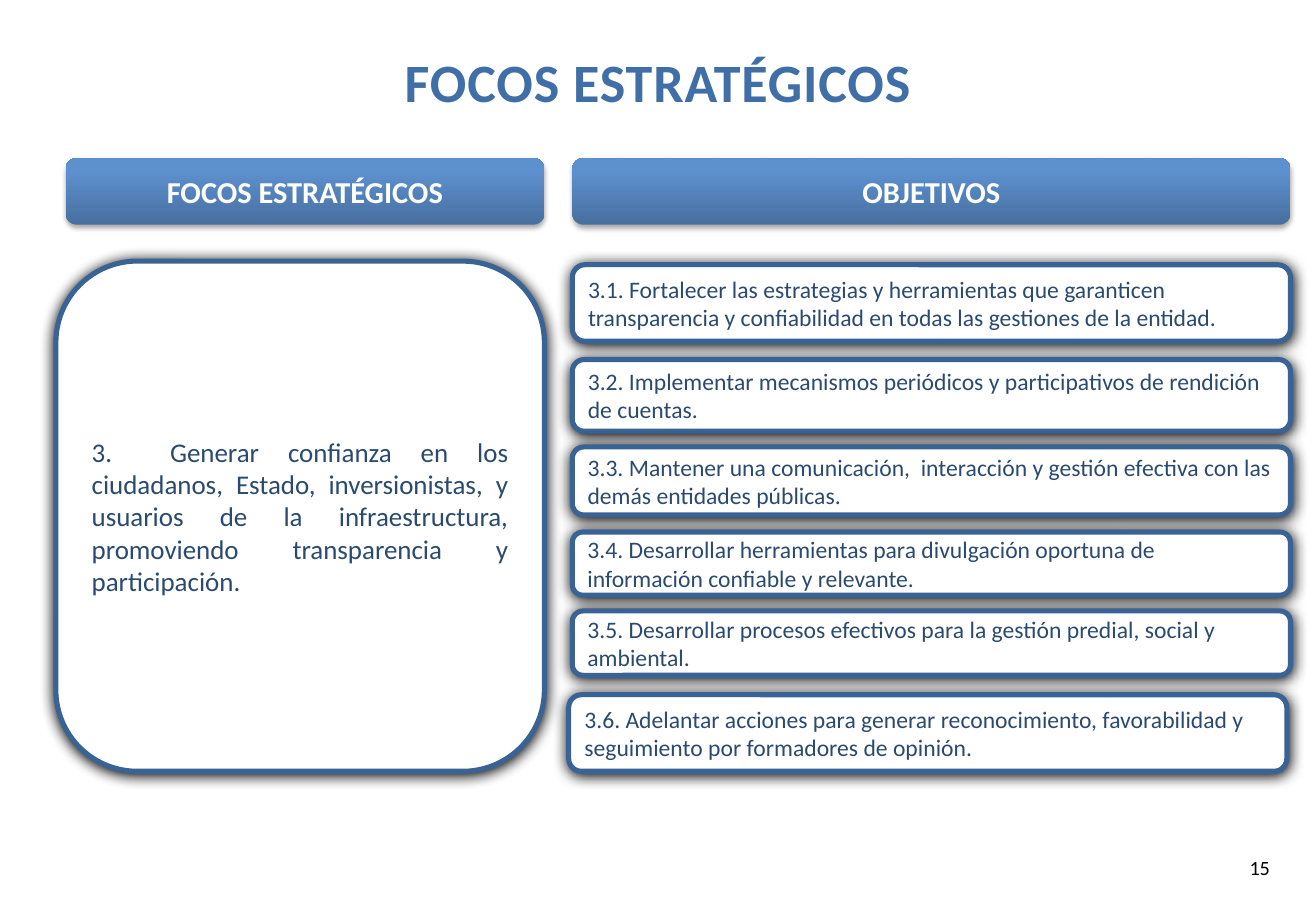
"""Build the slide of strategic focus areas and their objectives."""
from lxml import etree
from pptx import Presentation
from pptx.dml.color import RGBColor
from pptx.enum.shapes import MSO_SHAPE as Shape
from pptx.enum.text import MSO_ANCHOR as Anchor, PP_ALIGN as Align
from pptx.oxml import parse_xml
from pptx.oxml.ns import nsdecls, qn
from pptx.util import Inches, Pt

FONT = "Calibri"
WHITE = RGBColor(0xFF, 0xFF, 0xFF)
BLACK = RGBColor(0x00, 0x00, 0x00)
TITLE_BLUE = RGBColor(0x40, 0x6F, 0xA7)
BORDER_BLUE = RGBColor(0x39, 0x63, 0x95)
TEXT_BLUE = RGBColor(0x2B, 0x4A, 0x6F)
HEADER_STOPS = [
    (0, RGBColor(0x47, 0x6F, 0x9F)),
    (80, RGBColor(0x5D, 0x90, 0xCE)),
    (100, RGBColor(0x5B, 0x91, 0xD1)),
]


def write(box, text, size, color, align, bold=False, anchor=Anchor.MIDDLE):
    """Put one styled run in a box and return it."""
    frame = box.text_frame
    frame.word_wrap = True
    frame.vertical_anchor = anchor
    para = frame.paragraphs[0]
    para.alignment = align
    span = para.add_run()
    span.text = text
    span.font.name = FONT
    span.font.size = Pt(size)
    span.font.bold = bold
    span.font.color.rgb = color
    return span


def add_panel(page, left, top, width, height, blur, distance, opacity):
    """Add a rounded rectangle with a shadow falling downwards."""
    panel = page.shapes.add_shape(
        Shape.ROUNDED_RECTANGLE, Inches(left), Inches(top), Inches(width), Inches(height))
    panel.shadow.inherit = False
    effects = panel._element.spPr.find(qn("a:effectLst"))
    shadow = etree.SubElement(
        effects, qn("a:outerShdw"), blurRad=str(Pt(blur)), dist=str(Pt(distance)),
        dir="5400000", rotWithShape="0")
    shade = etree.SubElement(shadow, qn("a:srgbClr"), val=str(BLACK))
    etree.SubElement(shade, qn("a:alpha"), val=str(opacity * 1000))
    return panel


deck = Presentation()
deck.slide_width = Inches(10.83)
deck.slide_height = Inches(7.5)
page = deck.slides.add_slide(deck.slide_layouts[6])

number = page.shapes.add_textbox(Inches(8.02), Inches(6.94), Inches(2.53), Inches(0.4))
write(number, "15", 12, BLACK, Align.RIGHT)

title = page.shapes.add_textbox(0, Inches(0.35), deck.slide_width, Inches(0.64))
span = write(title, "FOCOS ESTRATÉGICOS", 32, TITLE_BLUE, Align.CENTER, True, Anchor.TOP)
span.font._element.set("spc", "50")

headers = [(0.54, 3.94, "FOCOS ESTRATÉGICOS"), (4.71, 5.91, "OBJETIVOS")]
stops = "".join(
    f'<a:gs pos="{position * 1000}"><a:srgbClr val="{color}"/></a:gs>'
    for position, color in HEADER_STOPS)
for left, width, text in headers:
    header = add_panel(page, left, 1.3, width, 0.55, 3.1, 1.8, 35)
    header.line.fill.background()
    gradient = parse_xml(
        f'<a:gradFill {nsdecls("a")} rotWithShape="1"><a:gsLst>{stops}</a:gsLst>'
        '<a:lin ang="16200000" scaled="0"/></a:gradFill>')
    header._element.spPr.find(qn("a:prstGeom")).addnext(gradient)
    write(header, text, 18, WHITE, Align.CENTER, True)

focus = "3.  Generar confianza en los ciudadanos, Estado, inversionistas, y usuarios de la infraestructura, promoviendo transparencia y participación."
objectives = [
    (4.71, 2.18, 0.63, "3.1. Fortalecer las estrategias y herramientas que garanticen transparencia y confiabilidad en todas las gestiones de la entidad."),
    (4.71, 2.96, 0.59, "3.2. Implementar mecanismos periódicos y participativos de rendición de cuentas."),
    (4.71, 3.68, 0.56, "3.3. Mantener una comunicación,  interacción y gestión efectiva con las demás entidades públicas."),
    (4.71, 4.38, 0.52, "3.4. Desarrollar herramientas para divulgación oportuna de información confiable y relevante."),
    (4.71, 5.03, 0.53, "3.5. Desarrollar procesos efectivos para la gestión predial, social y ambiental."),
    (4.68, 5.72, 0.63, "3.6. Adelantar acciones para generar reconocimiento, favorabilidad y seguimiento por formadores de opinión."),
]
cards = [(0.46, 2.15, 4.02, 4.2, focus, 16, Align.JUSTIFY)]
cards += [(left, top, 5.91, height, text, 14, Align.LEFT)
          for left, top, height, text in objectives]
for left, top, width, height, text, size, align in cards:
    card = add_panel(page, left, top, width, height, 8.5, 1, 100)
    card.fill.solid()
    card.fill.fore_color.rgb = WHITE
    card.line.color.rgb = BORDER_BLUE
    card.line.width = Pt(3)
    write(card, text, size, TEXT_BLUE, align)

deck.save("out.pptx")
